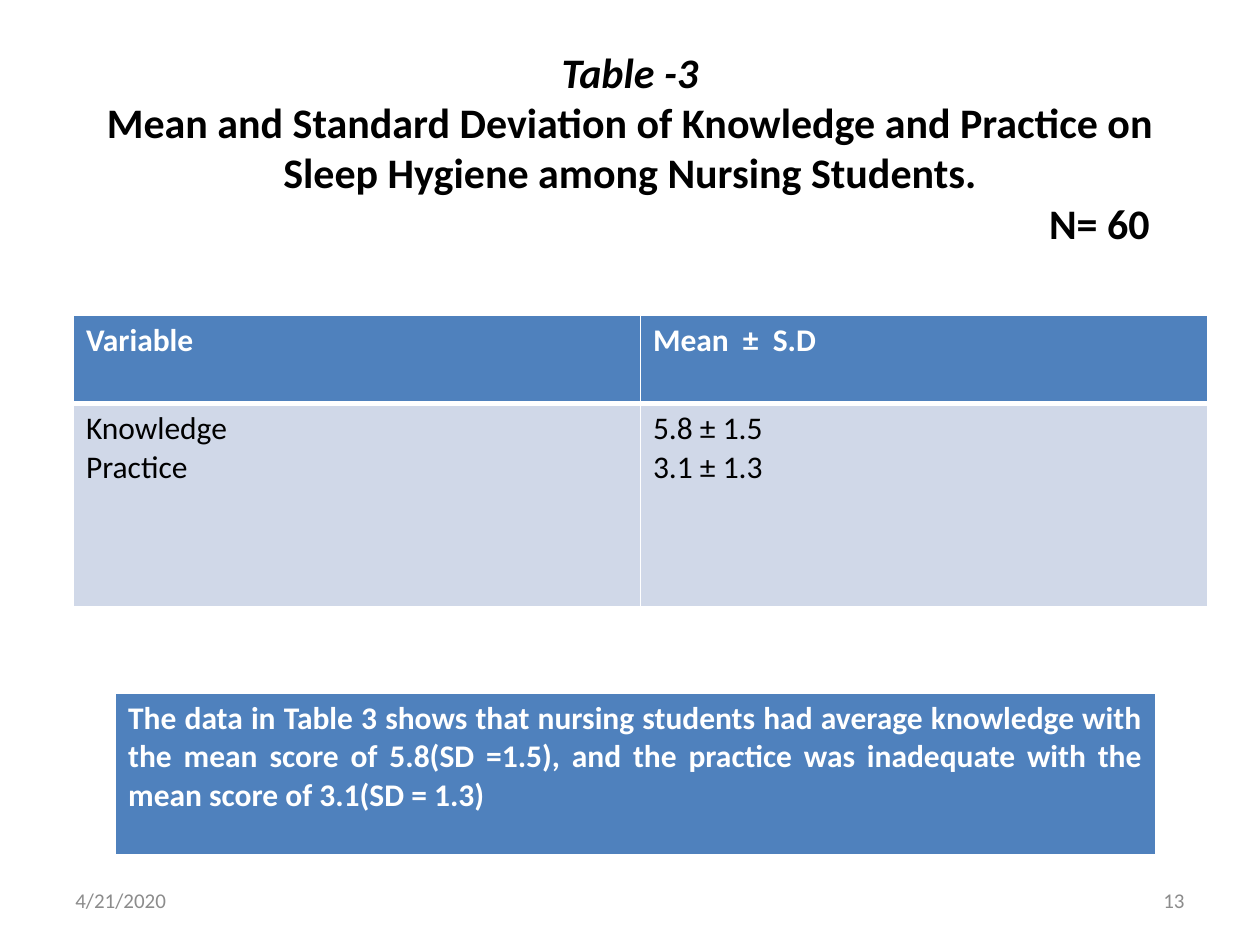
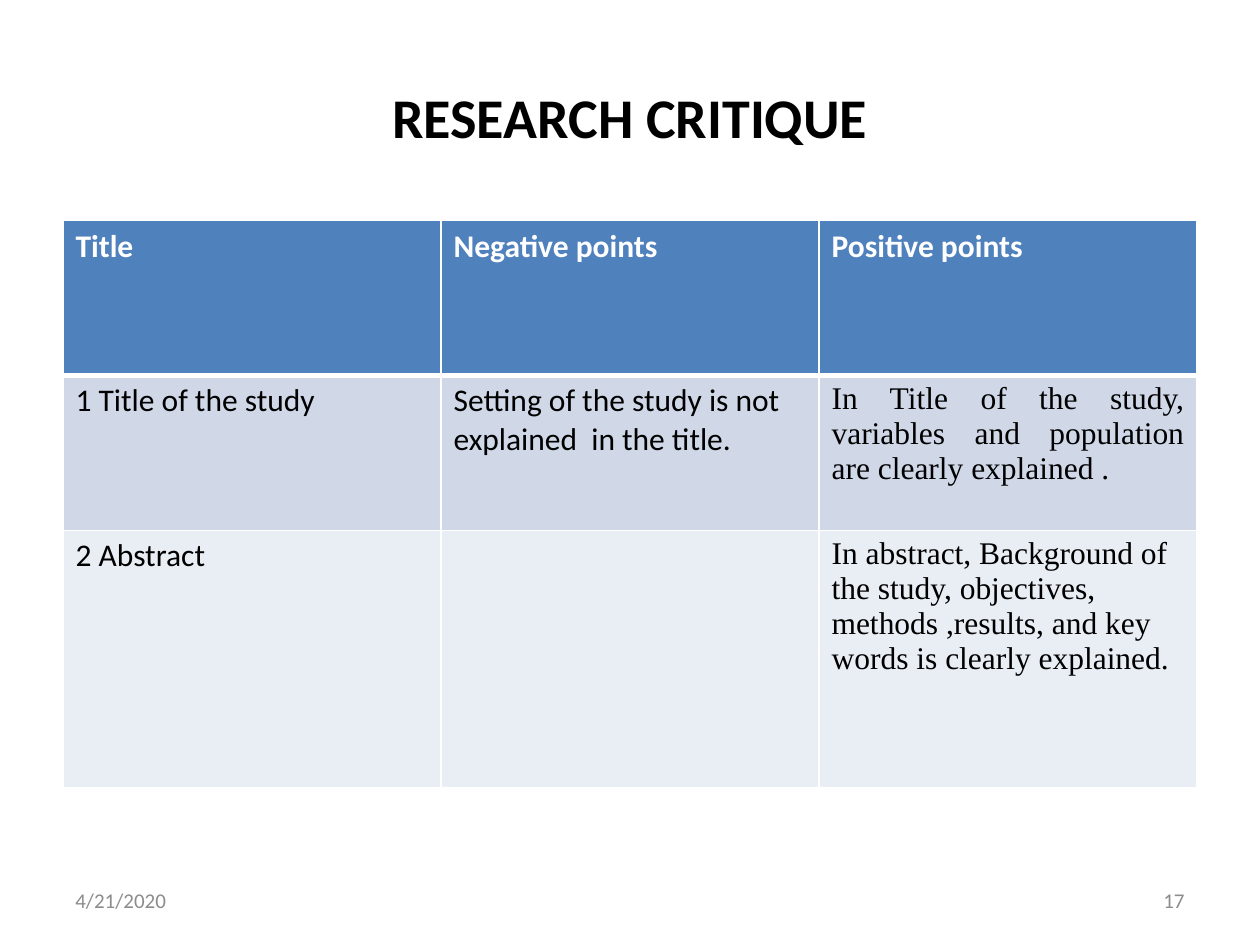
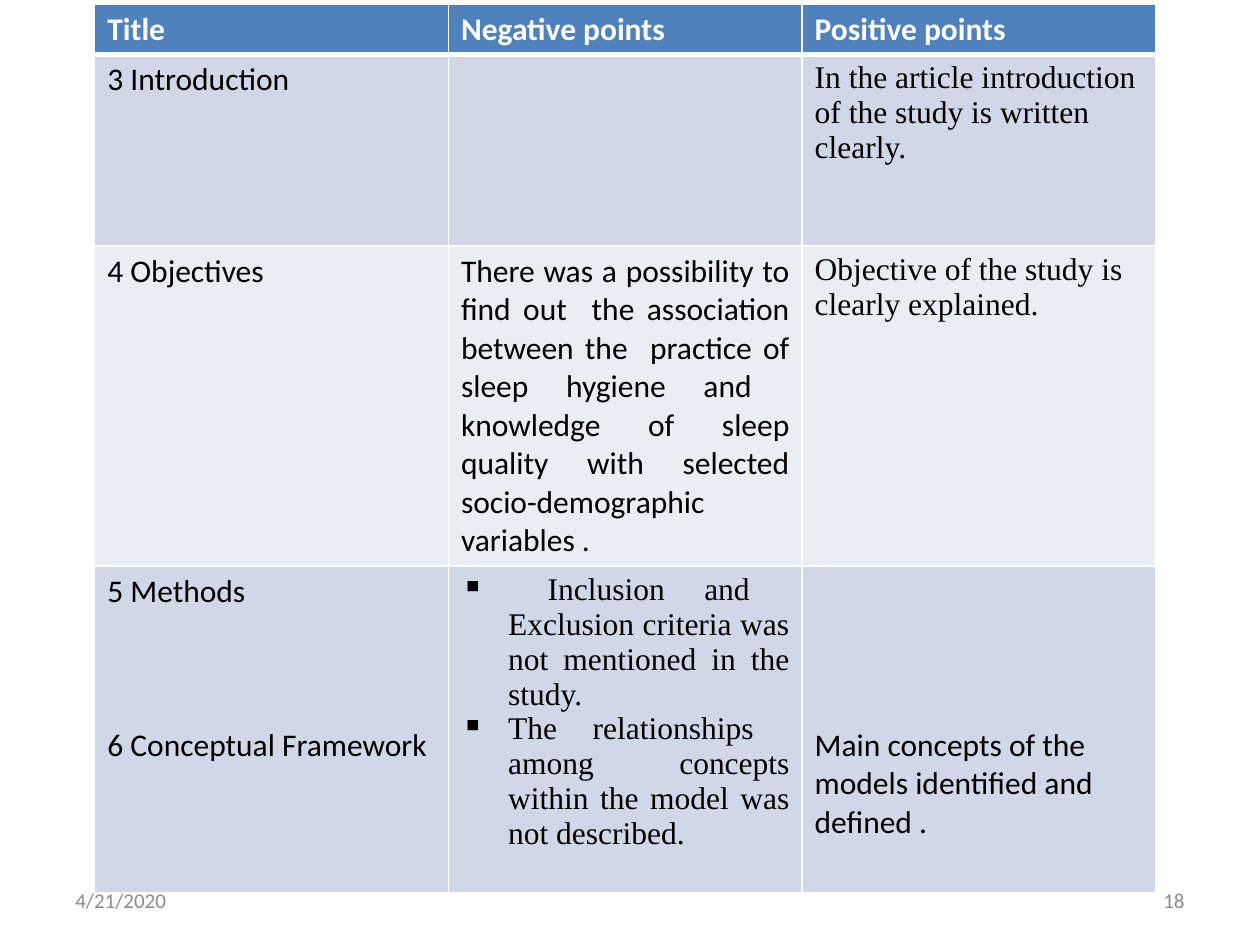
from dataclasses import dataclass

from lxml import etree
from pptx import Presentation
from pptx.dml.color import RGBColor
from pptx.enum.text import MSO_ANCHOR, MSO_AUTO_SIZE, PP_ALIGN
from pptx.oxml.ns import qn
from pptx.util import Cm, Pt

LEFT, MID, RIGHT, FULL = (
    PP_ALIGN.LEFT, PP_ALIGN.CENTER, PP_ALIGN.RIGHT, PP_ALIGN.JUSTIFY)
CENTER = MSO_ANCHOR.MIDDLE
FIXED = MSO_AUTO_SIZE.NONE
TITLED, BLANK = 5, 6


@dataclass(frozen=True)
class Theme:
    sans: str = "Calibri"
    serif: str = "Times New Roman"
    ink: str = "000000"
    white: str = "FFFFFF"
    head: str = "4F81BD"
    bands: tuple = ("D0D8E8", "E9EDF4")
    grey: str = "8C8C8C"
    large: int = 32
    title: int = 24
    body: int = 18
    small: int = 12
    thin: int = 1
    thick: int = 3


THEME = Theme()


@dataclass(frozen=True)
class Para:
    text: str
    font: str = THEME.sans
    align: int = LEFT
    italic: bool = False
    before: float = 0    # points above the paragraph
    right: float = 0     # right indent in cm
    bullet: str = ""


def serif(text, **more):
    return Para(text, font=THEME.serif, **more)


def apply(target, values):
    for name, value in values.items():
        setattr(target, name, value)


class Deck:
    def __init__(self, theme):
        self.theme = theme
        self.prs = Presentation()
        self.prs.slide_width, self.prs.slide_height = Cm(25.4), Cm(19.05)
        self.slide = None

    def page(self, number, layout=TITLED):
        self.slide = self.prs.slides.add_slide(self.prs.slide_layouts[layout])
        self.number = str(number)

    def fill_text(self, frame, paras, size, color, bold=False):
        for i, item in enumerate(paras):
            para = frame.paragraphs[0] if i == 0 else frame.add_paragraph()
            para.alignment = item.align
            if item.before:
                para.space_before = Pt(item.before)
            run = para.add_run()
            run.text = item.text
            apply(run.font, {"name": item.font, "size": Pt(size),
                             "bold": bold, "italic": item.italic})
            run.font.color.rgb = RGBColor.from_string(color)
            props = para._p.get_or_add_pPr()
            if item.right:
                props.set("marR", str(Cm(item.right)))
            if item.bullet:
                props.set("marL", str(Cm(0.95)))
                props.set("indent", str(-Cm(0.95)))
                mark = etree.SubElement(props, qn("a:buChar"))
                mark.set("char", item.bullet)

    def title(self, paras, height, size):
        shape = self.slide.shapes.title
        apply(shape, {"left": Cm(1.27), "top": Cm(0.76),
                      "width": Cm(22.86), "height": Cm(height)})
        apply(shape.text_frame, {"word_wrap": True, "auto_size": FIXED,
                                 "vertical_anchor": CENTER})
        self.fill_text(shape.text_frame, paras, size, self.theme.ink, True)

    def edge(self, cell, header):
        props = cell._tc.get_or_add_tcPr()
        for side in "LRTB":
            thick = header and side == "B"
            width = self.theme.thick if thick else self.theme.thin
            line = etree.SubElement(props, qn("a:ln" + side), w=str(Pt(width)))
            fill = etree.SubElement(line, qn("a:solidFill"))
            etree.SubElement(fill, qn("a:srgbClr"), val=self.theme.white)

    def table(self, left, top, wide, highs, rows, drops=None):
        """Draw a table; drops maps (row, column) to a top margin in cm."""
        t = self.theme
        count = len(rows[0])
        grid = self.slide.shapes.add_table(
            len(rows), count, Cm(left), Cm(top),
            Cm(wide * count), Cm(sum(highs))).table
        grid.horz_banding = False
        for col in grid.columns:
            col.width = Cm(wide)
        for r, (high, row) in enumerate(zip(highs, rows)):
            grid.rows[r].height = Cm(high)
            header = r == 0
            back = t.head if header else t.bands[(r - 1) % len(t.bands)]
            for c, paras in enumerate(row):
                cell = grid.cell(r, c)
                self.edge(cell, header)
                cell.fill.solid()
                cell.fill.fore_color.rgb = RGBColor.from_string(back)
                if drops and (r, c) in drops:
                    cell.margin_top = Cm(drops[r, c])
                self.fill_text(cell.text_frame, paras, t.body,
                               t.white if header else t.ink, header)

    def label(self, text, left, align):
        box = self.slide.shapes.add_textbox(
            Cm(left), Cm(17.65), Cm(5.92), Cm(1.01))
        apply(box.text_frame, {"word_wrap": True, "vertical_anchor": CENTER})
        self.fill_text(box.text_frame, [Para(text, align=align)],
                       self.theme.small, self.theme.grey)

    def footer(self):
        self.label("4/21/2020", 1.27, LEFT)
        self.label(self.number, 18.21, RIGHT)


HEADS = [[Para(text)]
         for text in ("Title", "Negative points", "Positive points")]


def scores(deck):
    deck.page(13)
    deck.title([
        Para("Table -3", align=MID, italic=True),
        Para("Mean and Standard Deviation of Knowledge and Practice on "
             "Sleep Hygiene among Nursing Students.", align=MID),
        Para("N= 60", align=RIGHT, right=0.7),
    ], 4.4, deck.theme.title)
    # Means of both variables
    deck.table(1.48, 6.35, 11.43, [1.78, 4.11], [
        [[Para("Variable")], [Para("Mean  ±  S.D")]],
        [[Para("Knowledge"), Para("Practice")],
         [Para("5.8 ± 1.5"), Para("3.1 ± 1.3")]],
    ])
    # Finding below the table
    deck.table(2.33, 13.97, 20.96, [3.3], [[[Para(
        "The data in Table 3 shows that nursing students had average "
        "knowledge with the mean score of 5.8(SD =1.5), and the practice "
        "was inadequate with the mean score of 3.1(SD = 1.3)", align=FULL)]]])
    deck.footer()


def critique(deck):
    deck.page(17)
    deck.title([Para("RESEARCH CRITIQUE", align=MID)], 3.18,
               deck.theme.large)
    deck.table(1.27, 4.45, 7.62, [3.12, 3.12, 5.18], [
        HEADS,
        [[Para("1 Title of the study")],
         [Para("Setting of the study is not explained  in the title.")],
         [serif("In Title of the study, variables and population are "
                "clearly explained .", align=FULL)]],
        [[Para("2 Abstract")], [],
         [serif("In abstract, Background of the study, objectives,  methods "
                ",results, and key words is clearly explained.")]],
    ])
    deck.footer()


def details(deck):
    deck.page(18, BLANK)
    deck.table(1.91, 0.08, 7.13, [1.02, 3.86, 6.45, 6.58], [
        HEADS,
        [[Para("3 Introduction")], [],
         [serif("In the article introduction of the study is written "
                "clearly.")]],
        [[Para("4 Objectives")],
         [Para("There was a possibility to find out  the association between "
               "the  practice of sleep hygiene and  knowledge of sleep "
               "quality with selected socio-demographic variables .",
               align=FULL)],
         [serif("Objective of the study is clearly explained.")]],
        [[Para("5 Methods"), Para("6 Conceptual Framework", before=66)],
         [serif(text, align=FULL, bullet="▪") for text in (
             " Inclusion and  Exclusion criteria was not mentioned in the "
             "study.",
             "The relationships  among concepts within the model was not "
             "described.")],
         [Para("Main concepts of the models identified and defined .")]],
    ], drops={(3, 2): 3.23})
    deck.footer()


def main():
    deck = Deck(THEME)
    for build in (scores, critique, details):
        build(deck)
    deck.prs.save("out.pptx")


if __name__ == "__main__":
    main()
